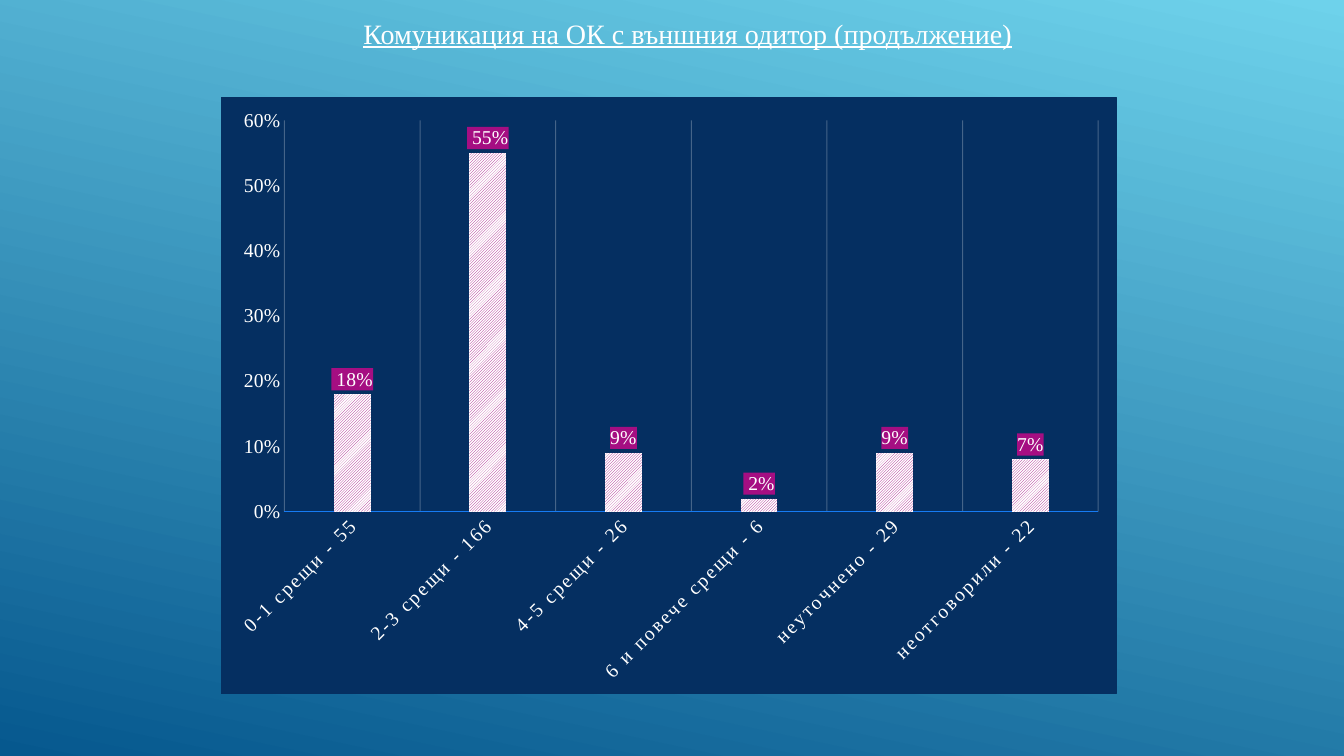
from lxml import etree
from pptx import Presentation
from pptx.chart.data import CategoryChartData
from pptx.dml.color import RGBColor
from pptx.enum.chart import XL_CHART_TYPE, XL_LABEL_POSITION, XL_TICK_MARK
from pptx.enum.dml import MSO_PATTERN
from pptx.enum.text import MSO_ANCHOR, PP_ALIGN
from pptx.oxml import parse_xml
from pptx.oxml.ns import qn
from pptx.util import Cm, Pt

COLUMNS = XL_CHART_TYPE.COLUMN_CLUSTERED
OUTSIDE = XL_LABEL_POSITION.OUTSIDE_END
NO_TICK = XL_TICK_MARK.NONE
STRIPES = MSO_PATTERN.LIGHT_UPWARD_DIAGONAL
CENTER = PP_ALIGN.CENTER
TOP = MSO_ANCHOR.TOP

WHITE = RGBColor(0xFF, 0xFF, 0xFF)
NAVY = RGBColor(0x05, 0x2F, 0x61)
MAGENTA = RGBColor(0xA5, 0x0E, 0x82)
AXIS_BLUE = RGBColor(0x16, 0x7B, 0xF3)
SKY = RGBColor(0x6E, 0xD2, 0xEB)
OCEAN = RGBColor(0x06, 0x58, 0x8E)

FONT = "Times New Roman"
MEETINGS = [
    ("0-1 срещи - 55", 0.18, " 18%"),
    ("2-3 срещи - 166", 0.55, " 55%"),
    ("4-5 срещи - 26", 0.09, "9%"),
    ("6 и повече срещи - 6", 0.02, " 2%"),
    ("неуточнено - 29", 0.09, "9%"),
    ("неотговорили - 22", 0.08, "7%"),
]


def style_font(font, size=14, color=WHITE, underline=None):
    """Set the typeface, size, colour and underline of a font."""
    font.name = FONT
    font.size = Pt(size)
    font.color.rgb = color
    font.underline = underline


def write_text(text_frame, text, align=CENTER, **font_format):
    """Write one formatted line into a text frame."""
    paragraph = text_frame.paragraphs[0]
    paragraph.alignment = align
    run = paragraph.add_run()
    run.text = text
    style_font(run.font, **font_format)
    return paragraph


def fill_properties(color, line_color=None):
    """Return chart shape properties with a solid fill and an optional border."""
    line = ""
    if line_color is not None:
        line = (f'<a:ln w="9525"><a:solidFill><a:srgbClr val="{line_color}"/>'
                "</a:solidFill></a:ln>")
    return parse_xml(
        '<c:spPr xmlns:c="http://schemas.openxmlformats.org/drawingml/2006/chart" '
        'xmlns:a="http://schemas.openxmlformats.org/drawingml/2006/main">'
        f'<a:solidFill><a:srgbClr val="{color}"/></a:solidFill>{line}</c:spPr>')


def paint_background(slide):
    """Fill the slide with the sky to ocean gradient."""
    fill = slide.background.fill
    fill.gradient()
    fill.gradient_angle = 360 - 102
    for stop, color, position in zip(fill.gradient_stops, (SKY, OCEAN), (0, 1)):
        stop.color.rgb = color
        stop.position = position


def add_title(slide, left, top, width, height):
    """Place the underlined heading in the given box."""
    text_frame = slide.shapes.add_textbox(left, top, width, height).text_frame
    text_frame.word_wrap = True
    text_frame.vertical_anchor = TOP
    paragraph = write_text(
        text_frame, "Комуникация на ОК с външния одитор (продължение)",
        size=20, underline=True)
    paragraph.space_after = Pt(6)


def style_axes(chart):
    """Format both axes, the slanted category names and the gridlines."""
    category_axis, value_axis = chart.category_axis, chart.value_axis
    for axis in (category_axis, value_axis):
        axis.major_tick_mark = axis.minor_tick_mark = NO_TICK
        style_font(axis.tick_labels.font)
    value_axis.has_major_gridlines = False
    value_axis.minimum_scale, value_axis.maximum_scale = 0, 0.6
    value_axis.major_unit = 0.1
    value_axis.tick_labels.number_format = "0%"
    value_axis.tick_labels.number_format_is_linked = False
    value_axis.format.line.fill.background()

    category_axis.format.line.color.rgb = AXIS_BLUE
    category_axis.format.line.width = Pt(0.25)
    category_axis.has_major_gridlines = True
    grid_line = category_axis.major_gridlines.format.line
    grid_line.color.rgb = WHITE
    grid_line.width = Pt(0.75)
    grid_color = category_axis.major_gridlines._xAx.find(
        f"{qn('c:majorGridlines')}//{qn('a:srgbClr')}")
    etree.SubElement(grid_color, qn("a:alpha"), val="25000")
    names = category_axis._element.find(qn("c:txPr"))
    names.find(qn("a:bodyPr")).set("rot", "-2700000")
    names.find(f".//{qn('a:defRPr')}").set("spc", "150")


def add_meetings_chart(slide, left, top, width, height):
    """Place the column chart of meeting counts in the given box."""
    data = CategoryChartData(number_format="0%")
    data.categories = [name for name, _, _ in MEETINGS]
    data.add_series("Series 1", [share for _, share, _ in MEETINGS])
    chart = slide.shapes.add_chart(COLUMNS, left, top, width, height, data).chart
    chart.has_legend = chart.has_title = False
    style_font(chart.font)
    chart.element.find(qn("c:chart")).addnext(fill_properties(NAVY, NAVY))
    style_axes(chart)

    plot = chart.plots[0]
    plot.vary_by_categories = False
    plot.gap_width, plot.overlap = 269, -20
    series = plot.series[0]
    series.format.fill.patterned()
    series.format.fill.pattern = STRIPES
    series.format.fill.fore_color.rgb = MAGENTA
    series.format.fill.back_color.rgb = WHITE
    for index, (_, _, caption) in enumerate(MEETINGS):
        label = series.points[index].data_label
        write_text(label.text_frame, caption)
        label.position = OUTSIDE
        label.text_frame._element.getparent().addnext(fill_properties(MAGENTA))


def main():
    """Build the slide and save the presentation."""
    presentation = Presentation()
    presentation.slide_width = Cm(33.87)
    presentation.slide_height = Cm(19.05)
    slide = presentation.slides.add_slide(presentation.slide_layouts[6])
    paint_background(slide)
    add_meetings_chart(slide, Cm(5.56), Cm(2.44), Cm(22.58), Cm(15.06))
    add_title(slide, Cm(6.12), Cm(0.28), Cm(22.43), Cm(2.69))
    presentation.save("out.pptx")


if __name__ == "__main__":
    main()
